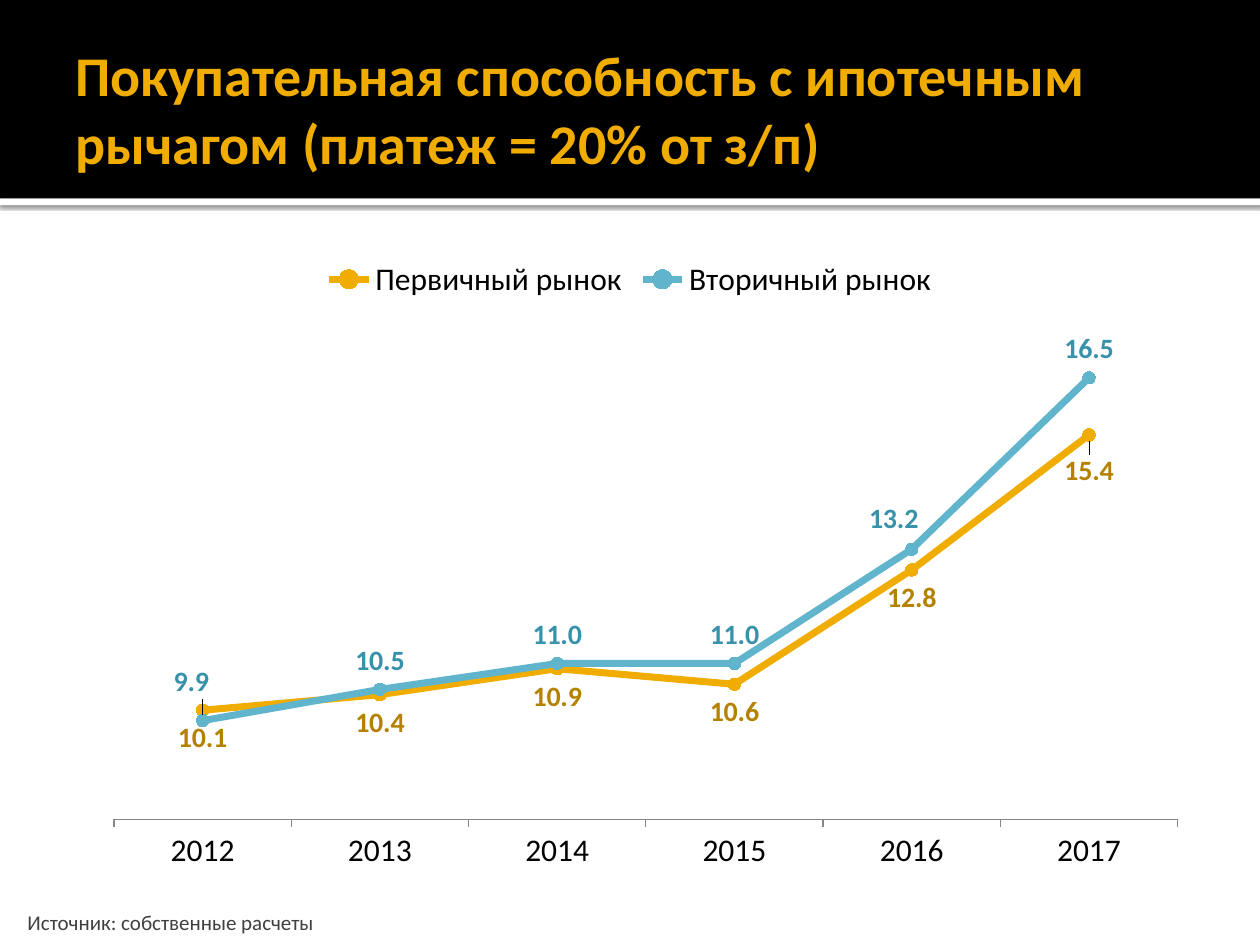
from dataclasses import dataclass

from lxml import etree
from pptx import Presentation
from pptx.chart.data import CategoryChartData
from pptx.dml.color import RGBColor
from pptx.enum.chart import (XL_CHART_TYPE, XL_LABEL_POSITION, XL_LEGEND_POSITION,
                             XL_MARKER_STYLE, XL_TICK_LABEL_POSITION, XL_TICK_MARK)
from pptx.enum.shapes import MSO_SHAPE
from pptx.enum.text import MSO_ANCHOR
from pptx.oxml import parse_xml
from pptx.oxml.ns import nsdecls, qn
from pptx.util import Inches, Pt

RECT = MSO_SHAPE.RECTANGLE
MIDDLE, TOP = MSO_ANCHOR.MIDDLE, MSO_ANCHOR.TOP
LINE = XL_CHART_TYPE.LINE_MARKERS
ABOVE, BELOW = XL_LABEL_POSITION.ABOVE, XL_LABEL_POSITION.BELOW
ROUND = XL_MARKER_STYLE.CIRCLE
NO_TICK, OUT = XL_TICK_MARK.NONE, XL_TICK_MARK.OUTSIDE
LOW = XL_TICK_LABEL_POSITION.LOW
LEGEND_TOP = XL_LEGEND_POSITION.TOP


@dataclass(frozen=True)
class Theme:
    font: str = "Calibri"
    black: str = "000000"
    white: str = "FFFFFF"
    gold: str = "F0AD00"
    ochre: str = "B48200"
    blue: str = "60B5CC"
    teal: str = "3792AA"
    gray: str = "404040"
    rule: str = "868686"
    title: int = 32
    axis: int = 18
    label: int = 16
    note: int = 12


def layout(**parts):
    """Manual chart layout; keys are the names of its child elements."""
    box = parse_xml(f"<c:layout {nsdecls('c')}><c:manualLayout/></c:layout>")
    for key, val in parts.items():
        etree.SubElement(box[0], qn(f"c:{key}")).set("val", str(val))
    return box


class Deck:
    def __init__(self, theme, wide=10, high=7.5):
        self.theme = theme
        self.prs = Presentation()
        self.prs.slide_width, self.prs.slide_height = Inches(wide), Inches(high)
        self.slide = self.prs.slides.add_slide(self.prs.slide_layouts[6])

    def place(self, left, top, width, height):
        """Turn shares of the slide into lengths."""
        w, h = self.prs.slide_width, self.prs.slide_height
        return int(left * w), int(top * h), int(width * w), int(height * h)

    def style(self, font, size, color, bold=False):
        font.name, font.size, font.bold = self.theme.font, Pt(size), bold
        font.color.rgb = RGBColor.from_string(color)

    def band(self, area, color, shade=False):
        shape = self.slide.shapes.add_shape(RECT, *self.place(*area))
        shape.shadow.inherit = False
        shape.fill.solid()
        shape.fill.fore_color.rgb = RGBColor.from_string(color)
        shape.line.fill.background()
        if shade:
            effects = shape._element.spPr.find(qn("a:effectLst"))
            effects.append(parse_xml(
                f'<a:outerShdw {nsdecls("a")} blurRad="{Pt(2.5)}" dist="{Pt(0.8)}" '
                f'dir="5400000" algn="t" rotWithShape="0"><a:srgbClr val="{self.theme.black}">'
                '<a:alpha val="60000"/></a:srgbClr></a:outerShdw>'))

    def text(self, area, words, size, color, bold=False, anchor=TOP):
        frame = self.slide.shapes.add_textbox(*self.place(*area)).text_frame
        frame.word_wrap = True
        frame.vertical_anchor = anchor
        frame.margin_right = Inches(0.05)
        frame.text = words
        self.style(frame.paragraphs[0].runs[0].font, size, color, bold)

    def chart(self, area, years, rows, plot):
        data = CategoryChartData(number_format="General")
        data.categories = years
        for row in rows:
            data.add_series(row["name"], row["vals"])
        chart = self.slide.shapes.add_chart(LINE, *self.place(*area), data).chart
        self.style(chart.font, 10, self.theme.black)
        chart.has_title = False

        # Legend
        chart.has_legend = True
        chart.legend.position = LEGEND_TOP
        chart.legend.include_in_layout = False
        self.style(chart.legend.font, self.theme.axis, self.theme.black)

        # Axes
        cats, vals = chart.category_axis, chart.value_axis
        cats.major_tick_mark, cats.minor_tick_mark = OUT, NO_TICK
        cats.tick_label_position = LOW
        cats.format.line.color.rgb = RGBColor.from_string(self.theme.rule)
        self.style(cats.tick_labels.font, self.theme.axis, self.theme.black)
        vals.minimum_scale, vals.maximum_scale = 8, 17
        vals.has_major_gridlines = vals.visible = False

        # Plot area
        space = chart._chartSpace.chart.plotArea
        for old in space.findall(qn("c:layout")):
            space.remove(old)
        x, y, w, h = plot
        space.insert(0, layout(layoutTarget="inner", xMode="edge", yMode="edge",
                               x=x, y=y, w=w, h=h))
        for series, row in zip(chart.plots[0].series, rows):
            self.series(series, row)

    def series(self, series, row):
        color = RGBColor.from_string(row["color"])
        series.smooth = False
        series.format.line.color.rgb = color
        series.format.line.width = Pt(4)
        mark = series.marker
        mark.style, mark.size = ROUND, 7
        mark.format.fill.solid()
        mark.format.fill.fore_color.rgb = color
        mark.format.line.color.rgb = color

        labels = series.data_labels
        labels.show_value = True
        labels.position = row["side"]
        labels.number_format, labels.number_format_is_linked = "#,##0.0", False
        look = self.theme.label, row["ink"], True
        self.style(labels.font, *look)

        # Labels moved off their default spot
        for spot, (x, y) in row["moved"].items():
            label = series.points[spot].data_label
            self.style(label.font, *look)
            label.position = row["side"]
            node = series._element.xpath(f"c:dLbls/c:dLbl[c:idx/@val='{spot}']")[0]
            node.insert(1, layout(x=x, y=y))


def main():
    theme = Theme()
    deck = Deck(theme)

    # Header
    head = 0.21
    deck.band((0, head, 1, 0.007), theme.white, shade=True)
    deck.band((0, 0, 1, head), theme.black)
    deck.text((0.05, 0.023, 0.9, 0.183),
              "Покупательная способность с ипотечным рычагом (платеж = 20% от з/п)",
              theme.title, theme.gold, bold=True, anchor=MIDDLE)

    # Chart
    years = [str(year) for year in range(2012, 2018)]
    rows = [
        dict(name="Первичный рынок", vals=(10.1, 10.4, 10.9, 10.6, 12.8, 15.4),
             color=theme.gold, ink=theme.ochre, side=BELOW, moved={5: (0, 0.013)}),
        dict(name="Вторичный рынок", vals=(9.9, 10.5, 11.0, 11.0, 13.2, 16.5),
             color=theme.blue, ink=theme.teal, side=ABOVE,
             moved={0: (-0.01, -0.016), 4: (-0.016, -0.003)}),
    ]
    deck.chart((0.05, 0.259, 0.9, 0.675), years, rows, (0.045, 0.168, 0.938, 0.733))

    # Source note
    deck.text((0.012, 0.956, 0.63, 0.04), "Источник: собственные расчеты",
              theme.note, theme.gray)
    deck.prs.save("out.pptx")


if __name__ == "__main__":
    main()
